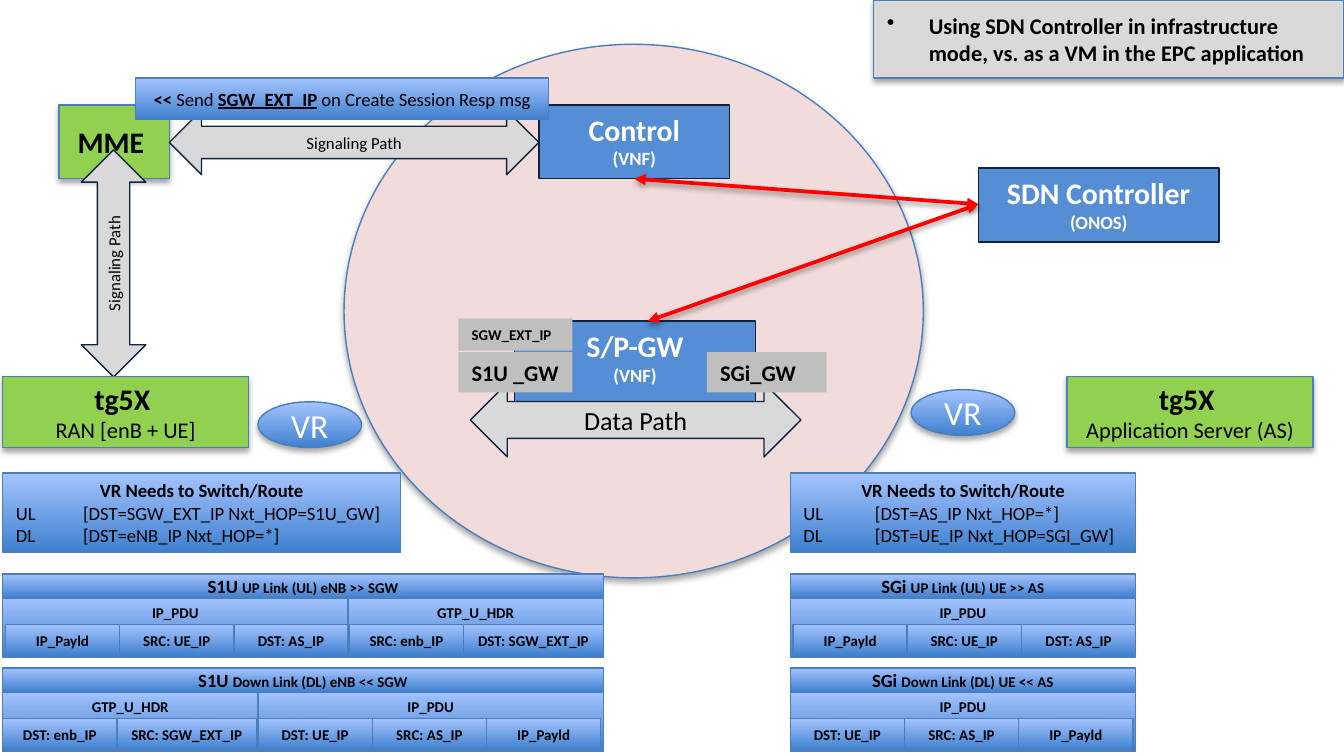
import pptx
import pptx.util
import pptx.dml.color
import pptx.enum.shapes
import pptx.enum.text
import pptx.oxml
import pptx.oxml.ns

MSO = pptx.enum.shapes.MSO_SHAPE
ALIGN = pptx.enum.text.PP_ALIGN
ANCHOR = pptx.enum.text.MSO_ANCHOR

THEME = {
    "font": "Calibri",
    "black": "000000", "white": "FFFFFF", "red": "FF0000",
    "edge": "4B7EBC", "navy": "0F243E", "rose": "F2DCDB", "blue": "558ED5",
    "gray": "D9D9D9", "silver": "BFBFBF", "green": "92D050",
    "gradient": ("3F80CE", "A4C4FF"),
    "title": 16, "oval": 18, "path": 14, "label": 12, "body": 10, "small": 9, "cell": 8,
}
STYLES = {
    "core": {"fill": "rose", "line": "edge", "shadow": True},
    "vnf": {"fill": "blue", "line": "navy", "color": "white", "top": True},
    "arrow": {"fill": "gray", "line": "navy"},
    "node": {"fill": "green", "line": "edge", "shadow": True},
    "oval": {"line": "edge", "shadow": True, "color": "white"},
    "tag": {"fill": "silver", "left": True, "top": True},
    "note": {"fill": "gray", "line": "edge", "shadow": True, "left": True},
    "panel": {"line": "edge"},
    "section": {"line": "edge", "top": True, "nowrap": True},
    "cell": {"line": "edge", "nowrap": True},
}

COLS = 100
W = pptx.util.Inches(10)
H = W * 9 // 16
UNIT = W / COLS


def named(name, detail, size="body", bold=True):
    return [[(name, "title", True)], [(detail, size, bold)]]


def one(text, size, bold=False):
    return [[(text, size, bold)]]


def routes(uplink, downlink):
    return [[("VR Needs to Switch/Route", "body", True)],
            [("UL\t" + uplink, "body", False)], [("DL\t" + downlink, "body", False)]]


MESSAGE = [[("<< ", "body", True), ("Send ", "body", False), ("SGW_EXT_IP", "body", True, True),
            (" on Create Session Resp msg", "body", False)]]
NOTE = "Using SDN Controller in infrastructure mode, vs. as a VM in the EPC application"

NETWORK = [
    ("core", MSO.OVAL, (25.6, 3.3, 43.1, 39.7), [], 0),
    ("vnf", MSO.RECTANGLE, (38.3, 23.9, 17.9, 6), named("S/P-GW", "(VNF)"), 0),
    ("arrow", MSO.LEFT_RIGHT_ARROW, (35, 28.5, 24.6, 5.5), one("Data Path", "path"), 0),
    ("vnf", MSO.RECTANGLE, (72.8, 12.5, 17.9, 5.5), named("SDN Controller", "(ONOS)"), 0),
    ("node", MSO.RECTANGLE, (4.4, 7.8, 8.2, 5.5), one("MME ", "title", True), 0),
    ("arrow", MSO.LEFT_RIGHT_ARROW, (0, 17.2, 16.9, 4.8), one("Signaling Path", "small"), 270),
    ("tag", MSO.RECTANGLE, (34.1, 26.2, 8.5, 3), one("S1U _GW", "label", True), 0),
    ("vnf", MSO.RECTANGLE, (40.1, 7.8, 14.2, 5.5), named("Control", "(VNF)"), 0),
    ("node", MSO.RECTANGLE, (79.4, 28, 18.3, 5.3),
     named("tg5X ", "Application Server (AS)", "label", False), 0),
    ("oval", MSO.OVAL, (19.2, 29.9, 7.7, 3.4), one("VR", "oval"), 0),
    ("oval", MSO.OVAL, (67.8, 29, 7.7, 3.4), one("VR", "oval"), 0),
    ("node", MSO.RECTANGLE, (0.2, 28, 18.3, 5.3),
     named("tg5X ", "RAN [enB + UE]", "label", False), 0),
    ("tag", MSO.RECTANGLE, (52.6, 26.2, 8.9, 3), one("SGi_GW", "label", True), 0),
    ("arrow", MSO.LEFT_RIGHT_ARROW, (12.6, 8.2, 27.5, 4.8), one("Signaling Path", "small"), 0),
    ("tag", MSO.RECTANGLE, (34.1, 23.7, 8.5, 2.4), one("SGW_EXT_IP", "cell", True), 0),
    ("panel", MSO.RECTANGLE, (10.1, 5.8, 30.7, 3.1), MESSAGE, 0),
    ("note", MSO.RECTANGLE, (65, 0, 35, 5.8), one(NOTE, "label", True), 0),
    ("panel", MSO.RECTANGLE, (0.2, 35.2, 29.6, 5.9),
     routes("[DST=SGW_EXT_IP Nxt_HOP=S1U_GW]", "[DST=eNB_IP Nxt_HOP=*]"), 0),
    ("panel", MSO.RECTANGLE, (58.8, 35.2, 25.7, 5.9),
     routes(" [DST=AS_IP Nxt_HOP=*]", " [DST=UE_IP Nxt_HOP=SGI_GW]"), 0),
]
LINKS = [((47.2, 13.3), (72.8, 15.2)), ((72.8, 15.2), (48.2, 23.9))]

UP_PDU = ("IP_PDU", 25.7, ["IP_Payld", "SRC: UE_IP", "DST: AS_IP"])
DOWN_PDU = ("IP_PDU", 25.7, ["DST: UE_IP", "SRC: AS_IP", "IP_Payld"])
UP_GTP = ("GTP_U_HDR", 19, ["SRC: enb_IP", "DST: SGW_EXT_IP"])
DOWN_GTP = ("GTP_U_HDR", 19, ["DST: enb_IP", "SRC: SGW_EXT_IP"])
PACKETS = [
    (0.2, 42.7, "S1U ", "UP Link (UL) eNB >> SGW", [UP_PDU, UP_GTP]),
    (0.2, 49.7, "S1U ", "Down Link (DL) eNB << SGW", [DOWN_GTP, DOWN_PDU]),
    (58.8, 42.7, "SGi ", "UP Link (UL) UE >> AS", [UP_PDU]),
    (58.8, 49.7, "SGi ", "Down Link (DL) UE << AS", [DOWN_PDU]),
]
HEAD_H, SECTION_TOP, SECTION_H, CELL_TOP, CELL_H = 1.8, 1.7, 4.5, 3.75, 2.4
CELL_W, WIDE_CELL_W = 8.5, 10.4


def grid(*values):
    return [round(v * UNIT) for v in values]


def rgb(name):
    return pptx.dml.color.RGBColor.from_string(THEME[name])


def append_xml(parent, tag, attrs="", inner=""):
    ns = pptx.oxml.ns.nsdecls("a")
    parent.append(pptx.oxml.parse_xml(f"<a:{tag} {ns} {attrs}>{inner}</a:{tag}>"))


def add_shadow(sp, alpha, dist):
    append_xml(sp._element.spPr, "effectLst", inner=(
        f'<a:outerShdw blurRad="39370" dist="{dist}" dir="5400000" rotWithShape="0">'
        f'<a:srgbClr val="{THEME["black"]}"><a:alpha val="{alpha}"/></a:srgbClr></a:outerShdw>'))


def paint(sp, style):
    if "fill" in style:
        sp.fill.solid()
        sp.fill.fore_color.rgb = rgb(style["fill"])
    else:
        sp.fill.gradient()
        sp.fill.gradient_angle = 90
        for stop, color in zip(sp.fill.gradient_stops, THEME["gradient"]):
            stop.color.rgb = pptx.dml.color.RGBColor.from_string(color)
    if "line" in style:
        sp.line.color.rgb = rgb(style["line"])
        sp.line.width = pptx.util.Pt(0.75)
    else:
        sp.line.fill.background()
    if style.get("shadow"):
        add_shadow(sp, 35000, 22860)
    else:
        sp.shadow.inherit = False


def write(tf, paragraphs, kind):
    style = STYLES[kind]
    tf.word_wrap = not style.get("nowrap", False)
    tf.vertical_anchor = ANCHOR.TOP if style.get("top") else ANCHOR.MIDDLE
    if kind == "tag":
        tf.margin_right = 0
    for i, runs in enumerate(paragraphs):
        p = tf.paragraphs[0] if i == 0 else tf.add_paragraph()
        tabbed = "\t" in runs[0][0]
        p.alignment = ALIGN.LEFT if style.get("left") or tabbed else ALIGN.CENTER
        pPr = p._p.get_or_add_pPr()
        if kind == "note":
            pPr.set("marL", "285750")
            pPr.set("indent", "-285750")
            append_xml(pPr, "buChar", 'char="•"')
        if tabbed:
            append_xml(pPr, "tabLst", inner='<a:tab pos="457200" algn="l"/>')
        for text, size, bold, *underline in runs:
            r = p.add_run()
            r.text = text
            r.font.name = THEME["font"]
            r.font.size = pptx.util.Pt(THEME[size])
            r.font.bold = bold
            r.font.underline = bool(underline)
            r.font.color.rgb = rgb(style.get("color", "black"))


def add_box(shapes, kind, shape, at, paragraphs, rotation=0):
    sp = shapes.add_shape(shape, *grid(*at))
    sp.rotation = rotation
    paint(sp, STYLES[kind])
    write(sp.text_frame, paragraphs, kind)


def add_link(shapes, start, end):
    cx = shapes.add_connector(pptx.enum.shapes.MSO_CONNECTOR.STRAIGHT, *grid(*start, *end))
    cx.line.color.rgb = rgb("red")
    cx.line.width = pptx.util.Pt(2)
    for tag in ("headEnd", "tailEnd"):
        append_xml(cx.line._get_or_add_ln(), tag, 'type="triangle"')
    add_shadow(cx, 38000, 20320)


def add_packet(shapes, left, top, link, direction, sections):
    group = shapes.add_group_shape().shapes
    x = left
    for title, width, cells in sections:
        add_box(group, "section", MSO.RECTANGLE, (x, top + SECTION_TOP, width, SECTION_H),
                one(title, "cell", True))
        widths = [WIDE_CELL_W if "EXT" in cell else CELL_W for cell in cells]
        start = x + width - sum(widths) if "UL" in direction else x
        for i, (cell, cell_w) in enumerate(zip(cells, widths)):
            add_box(group, "cell", MSO.RECTANGLE,
                    (start + sum(widths[:i]), top + CELL_TOP, cell_w, CELL_H), one(cell, "cell", True))
        x += width
    add_box(group, "cell", MSO.RECTANGLE, (left, top, x - left, HEAD_H),
            [[(link, "body", True), (direction, "cell", True)]])


prs = pptx.Presentation()
prs.slide_width, prs.slide_height = W, H
slide = prs.slides.add_slide(prs.slide_layouts[6])
for box in NETWORK:
    add_box(slide.shapes, *box)
for link in LINKS:
    add_link(slide.shapes, *link)
for packet in PACKETS:
    add_packet(slide.shapes, *packet)
prs.save("out.pptx")
